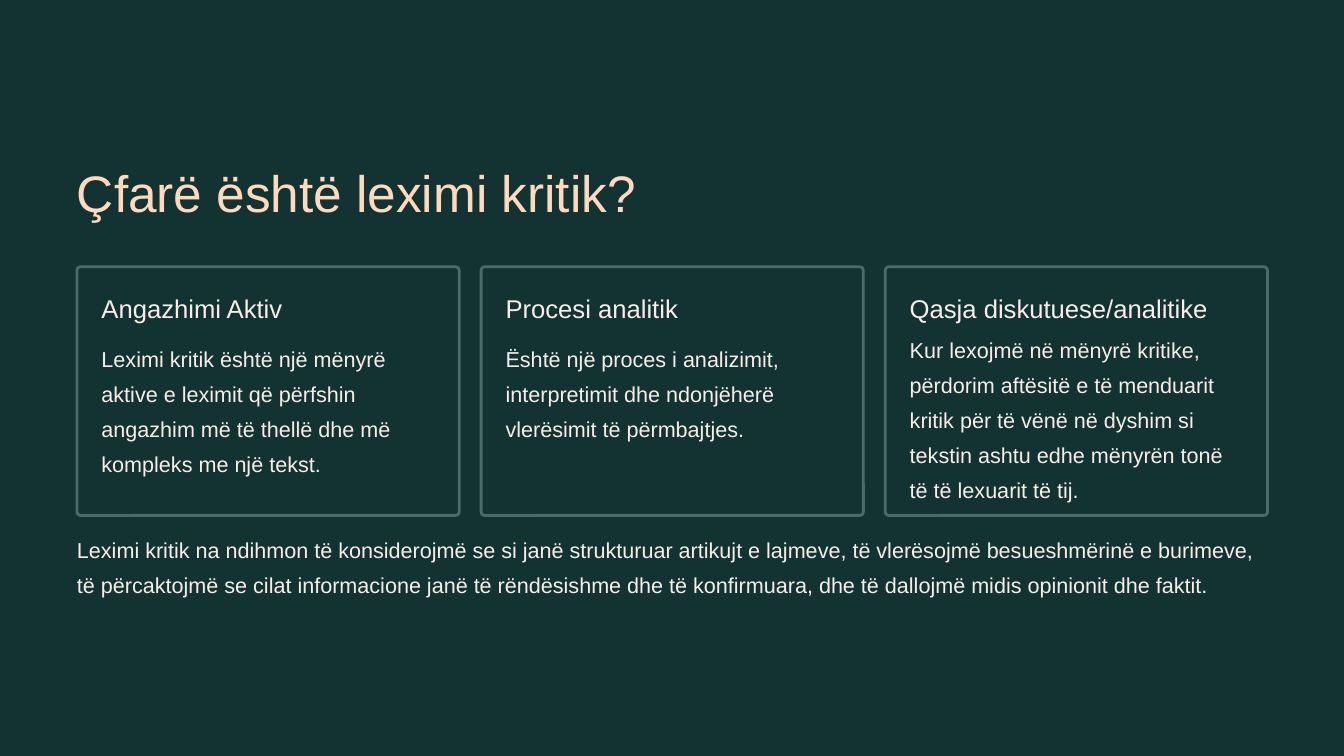
from dataclasses import dataclass

from pptx import Presentation
from pptx import util as u
from pptx.dml.color import RGBColor
from pptx.enum import shapes, text
from pptx.shapes.autoshape import Shape
from pptx.slide import Slide

COLORS = {
    "background": "123332",
    "border": "4A6B6A",
    "title": "FFD9BE",
    "body": "F9EEE7",
}
FONT = "Arial"
SLIDE_WIDTH = 1152
SLIDE_HEIGHT = 648
MARGIN = 66
CARD_TOP = 228.7
CARD_WIDTH = 327.6
CARD_HEIGHT = 213.1
CARD_PITCH = 346.4
CARD_PADDING = 21
BODY_WIDTH = 285.1


@dataclass(frozen=True)
class TextStyle:
    size: float
    line_spacing: float
    color: str
    wrap: bool


@dataclass(frozen=True)
class Card:
    heading: str
    body: str
    body_top: float
    body_height: float


TITLE = TextStyle(44, 55, "title", False)
HEADING = TextStyle(22, 27.5, "body", False)
BODY = TextStyle(18.5, 30, "body", True)

CARDS = [
    Card(
        "Angazhimi Aktiv",
        "Leximi kritik është një mënyrë aktive e leximit që përfshin "
        "angazhim më të thellë dhe më kompleks me një tekst.",
        288.7,
        121,
    ),
    Card(
        "Procesi analitik",
        "Është një proces i analizimit, interpretimit dhe ndonjëherë "
        "vlerësimit të përmbajtjes.",
        288.7,
        90.7,
    ),
    Card(
        "Qasja diskutuese/analitike",
        "Kur lexojmë në mënyrë kritike, përdorim aftësitë e të menduarit "
        "kritik për të vënë në dyshim si tekstin ashtu edhe mënyrën tonë "
        "të të lexuarit të tij.",
        281.1,
        121,
    ),
]
SUMMARY = (
    "Leximi kritik na ndihmon të konsiderojmë se si janë strukturuar artikujt "
    "e lajmeve, të vlerësojmë besueshmërinë e burimeve, të përcaktojmë se cilat "
    "informacione janë të rëndësishme dhe të konfirmuara, dhe të dallojmë midis "
    "opinionit dhe faktit."
)


def color(name: str) -> RGBColor:
    return RGBColor.from_string(COLORS[name])


def add_panel(slide: Slide, kind: shapes.MSO_SHAPE, left: float, top: float,
              width: float, height: float) -> Shape:
    shape = slide.shapes.add_shape(kind, u.Pt(left), u.Pt(top), u.Pt(width), u.Pt(height))
    shape.shadow.inherit = False
    shape.fill.solid()
    shape.fill.fore_color.rgb = color("background")
    shape.line.fill.background()
    return shape


def add_text(slide: Slide, left: float, top: float, width: float, height: float,
             content: str, style: TextStyle) -> None:
    shape = slide.shapes.add_textbox(u.Pt(left), u.Pt(top), u.Pt(width), u.Pt(height))
    frame = shape.text_frame
    frame.margin_left = frame.margin_right = u.Pt(0)
    frame.margin_top = frame.margin_bottom = u.Pt(0)
    frame.word_wrap = style.wrap
    frame.vertical_anchor = text.MSO_ANCHOR.TOP
    paragraph = frame.paragraphs[0]
    paragraph.alignment = text.PP_ALIGN.LEFT
    paragraph.line_spacing = u.Pt(style.line_spacing)
    run = paragraph.add_run()
    run.text = content
    run.font.name = FONT
    run.font.size = u.Pt(style.size)
    run.font.color.rgb = color(style.color)


def add_card(slide: Slide, left: float, card: Card) -> None:
    shape = add_panel(slide, shapes.MSO_SHAPE.ROUNDED_RECTANGLE,
                      left, CARD_TOP, CARD_WIDTH, CARD_HEIGHT)
    shape.adjustments[0] = 0.014
    shape.line.color.rgb = color("border")
    shape.line.width = u.Pt(2.4)
    text_left = left + CARD_PADDING
    add_text(slide, text_left, CARD_TOP + CARD_PADDING, BODY_WIDTH, 27.5, card.heading, HEADING)
    add_text(slide, text_left, card.body_top, BODY_WIDTH, card.body_height, card.body, BODY)


def main() -> None:
    presentation = Presentation()
    presentation.slide_width = u.Pt(SLIDE_WIDTH)
    presentation.slide_height = u.Pt(SLIDE_HEIGHT)
    slide = presentation.slides.add_slide(presentation.slide_layouts[6])

    add_panel(slide, shapes.MSO_SHAPE.RECTANGLE, 0, 0, SLIDE_WIDTH, SLIDE_HEIGHT)
    add_text(slide, MARGIN, 135.8, 497.5, 55.4, "Çfarë është leximi kritik?", TITLE)
    for index, card in enumerate(CARDS):
        add_card(slide, MARGIN + index * CARD_PITCH, card)
    add_text(slide, MARGIN, 452.2, 1020.2, 60.5, SUMMARY, BODY)

    presentation.save("out.pptx")


if __name__ == "__main__":
    main()
